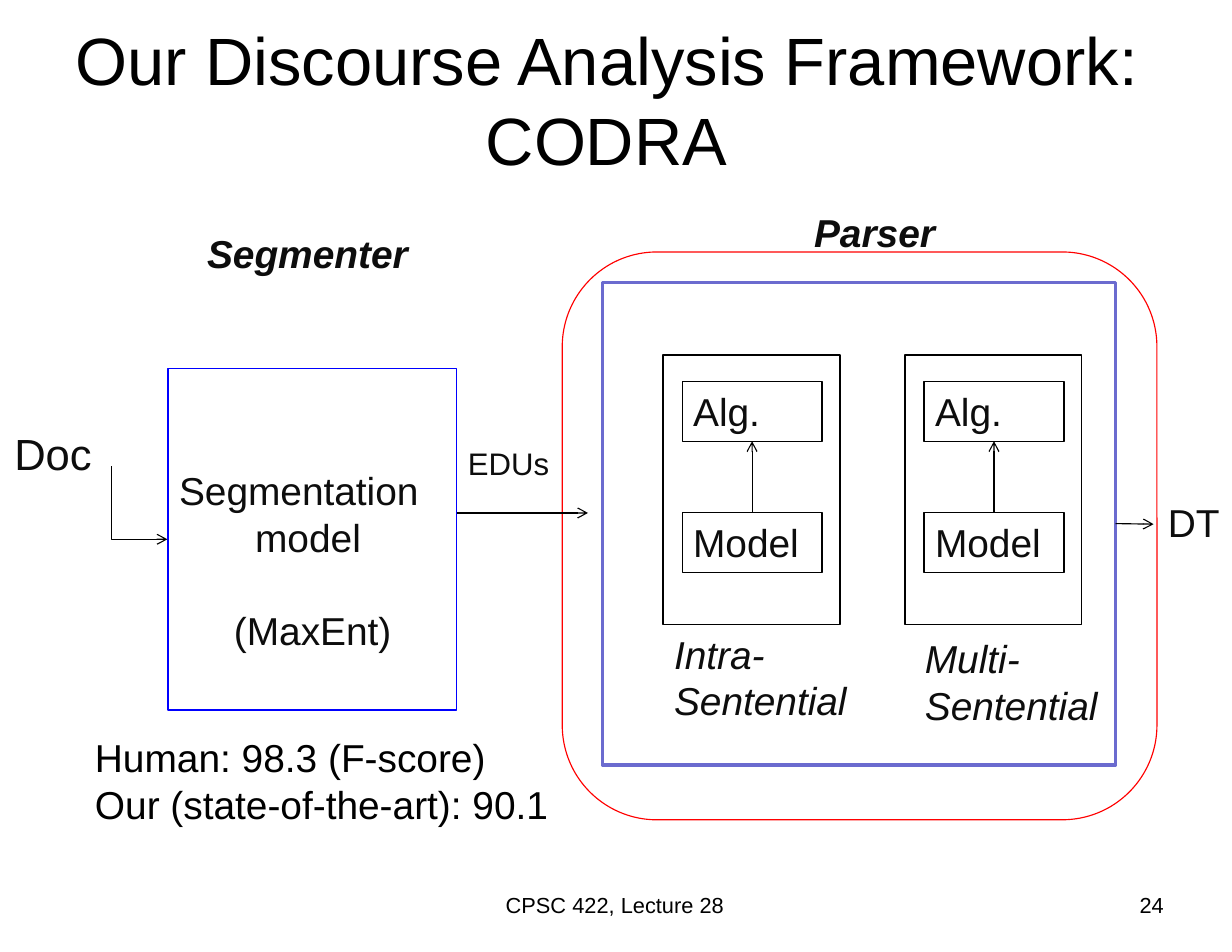
from lxml.etree import SubElement
from pptx import Presentation
from pptx.dml.color import RGBColor
from pptx.enum.shapes import MSO_CONNECTOR, MSO_SHAPE
from pptx.enum.text import MSO_ANCHOR, PP_ALIGN
from pptx.oxml.ns import qn
from pptx.util import Inches, Pt

THEME = {
    "font": "Arial",
    "black": "000000", "ink": "0D0D0D", "white": "FFFFFF",
    "red": "FF0000", "blue": "0000FF", "violet": "6B6BCF",
    "title": 43, "input": 28, "body": 25, "edge": 20, "footer": 14,
    "thin": 0.75, "thick": 2.25,
}
BODY = {"size": "body", "color": "ink"}
HEADING = {**BODY, "bold": True, "italic": True, "wrap": False}
CAPTION = {**BODY, "italic": True, "wrap": False}
FOOTER = {"size": "footer", "color": "black"}

LABELS = [
    (["Our Discourse Analysis Framework: CODRA"], (0, 0.17, 10.83, 1.42),
     {"size": "title", "color": "black", "align": PP_ALIGN.CENTER, "anchor": MSO_ANCHOR.MIDDLE}),
    (["Doc"], (0.03, 3.76, 1.17, 0.58), {"size": "input", "color": "ink"}),
    (["Segmenter"], (1.75, 2, 2.01, 0.52), HEADING),
    (["Parser"], (7.17, 1.81, 2.25, 0.52), {**HEADING, "wrap": True}),
    (["EDUs"], (4.08, 3.92, 0.93, 0.44), {"size": "edge", "color": "ink", "wrap": False}),
    (["DT"], (10.33, 4.4, 0.67, 0.53), {**BODY, "wrap": False}),
    (["Human: 98.3 (F-score)", "Our (state-of-the-art): 90.1"], (0.75, 6.5, 4.67, 0.93),
     {"size": "body", "color": "black"}),
    (["CPSC 422, Lecture 28"], (3.75, 7.91, 3.48, 0.59), {**FOOTER, "align": PP_ALIGN.CENTER}),
    (["24"], (7.92, 7.91, 2.57, 0.59), {**FOOTER, "align": PP_ALIGN.RIGHT}),
]
SEGMENTER = (["Segmentation", "model", "(MaxEnt)"], (1.5, 3.29, 2.58, 3.05))
SEGMENTER_INDENTS = (0, 0.68, 0.49)
PARSER_FRAME = (5.02, 2.25, 5.31, 5.07)
PARSER_BOX = (5.38, 2.52, 4.58, 4.31)
STAGES = [
    (5.92, ["Intra-", "Sentential"], (5.92, 5.58)),
    (8.08, ["Multi-", "Sentential"], (8.16, 5.62)),
]
STAGE_TOP, STAGE_SIZE = 3.17, (1.58, 2.41)
STEPS = [("Alg.", 3.41), ("Model", 4.58)]
STEP_INSET, STEP_SIZE = 0.17, (1.25, 0.53)
CAPTION_SIZE = (1.76, 0.94)


def color(name):
    """Return a theme colour."""
    return RGBColor.from_string(THEME[name])


def write(shape, lines, style):
    """Set the text of a shape, one paragraph a line."""
    frame = shape.text_frame
    frame.word_wrap = style.get("wrap", True)
    frame.vertical_anchor = style.get("anchor", MSO_ANCHOR.TOP)
    font_values = {"name": THEME["font"], "size": Pt(THEME[style["size"]]),
                   "bold": style.get("bold", False), "italic": style.get("italic", False)}
    for index, line in enumerate(lines):
        paragraph = frame.add_paragraph() if index else frame.paragraphs[0]
        paragraph.alignment = style.get("align", PP_ALIGN.LEFT)
        run = paragraph.add_run()
        run.text = line
        for name, value in font_values.items():
            setattr(run.font, name, value)
        run.font.color.rgb = color(style["color"])


def add_label(slide, lines, place, style):
    """Add a text box."""
    write(slide.shapes.add_textbox(*map(Inches, place)), lines, style)


def add_box(slide, place, line, fill=None, width="thin", kind=MSO_SHAPE.RECTANGLE):
    """Add an outlined box."""
    shape = slide.shapes.add_shape(kind, *map(Inches, place))
    shape.shadow.inherit = False
    if fill:
        shape.fill.solid()
        shape.fill.fore_color.rgb = color(fill)
    else:
        shape.fill.background()
    shape.line.color.rgb = color(line)
    shape.line.width = Pt(THEME[width])
    return shape


def add_arrow(slide, start, end, kind=MSO_CONNECTOR.STRAIGHT):
    """Add a connector with an open arrowhead at its end."""
    arrow = slide.shapes.add_connector(kind, *map(Inches, (*start, *end)))
    arrow.line.color.rgb = color("black")
    arrow.line.width = Pt(THEME["thin"])
    properties = arrow._element.spPr
    SubElement(properties.find(qn("a:ln")), qn("a:tailEnd"), type="arrow")
    SubElement(properties, qn("a:effectLst"))
    return arrow


def add_segmenter(slide):
    """Add the segmentation model and the arrows around it."""
    lines, place = SEGMENTER
    box = add_box(slide, place, "blue", "white")
    write(box, lines, BODY)
    box.text_frame.margin_top = Inches(0.88)
    paragraphs = box.text_frame.paragraphs
    for paragraph, indent in zip(paragraphs, SEGMENTER_INDENTS):
        paragraph._p.get_or_add_pPr().set("marL", str(Inches(indent)))
    paragraphs[-1].space_before = Pt(30)
    bend = add_arrow(slide, (1, 4.16), (1.5, 4.81), MSO_CONNECTOR.ELBOW)
    bend.end_connect(box, 1)
    frame = {"left": 0.92, "top": 4.24, "width": 0.65, "height": 0.5}
    for name, value in frame.items():
        setattr(bend, name, Inches(value))
    properties = bend._element.spPr
    properties.find(qn("a:prstGeom")).set("prst", "bentConnector2")
    for name, value in {"rot": "16200000", "flipH": "1"}.items():
        properties.find(qn("a:xfrm")).set(name, value)
    add_arrow(slide, (4.08, 4.58), (5.25, 4.58))


def add_stage(slide, left, caption, caption_place):
    """Add one parsing stage with its model, algorithm and caption."""
    add_box(slide, (left, STAGE_TOP, *STAGE_SIZE), "black", "white")
    steps = []
    for text, top in STEPS:
        step = add_box(slide, (left + STEP_INSET, top, *STEP_SIZE), "black")
        write(step, [text], BODY)
        step.text_frame.vertical_anchor = MSO_ANCHOR.TOP
        steps.append(step)
    algorithm, model = steps
    middle = left + STEP_INSET + STEP_SIZE[0] / 2
    arrow = add_arrow(slide, (middle, STEPS[1][1]), (middle, STEPS[0][1] + STEP_SIZE[1]))
    arrow.begin_connect(model, 0)
    arrow.end_connect(algorithm, 2)
    add_label(slide, caption, (*caption_place, *CAPTION_SIZE), CAPTION)


def main():
    """Build the slide and save it."""
    presentation = Presentation()
    presentation.slide_width, presentation.slide_height = Inches(11), Inches(8.5)
    slide = presentation.slides.add_slide(presentation.slide_layouts[6])
    add_box(slide, PARSER_FRAME, "red", "white", kind=MSO_SHAPE.ROUNDED_RECTANGLE)
    add_segmenter(slide)
    parser = add_box(slide, PARSER_BOX, "violet", width="thick")
    for stage in STAGES:
        add_stage(slide, *stage)
    add_arrow(slide, (9.96, 4.68), (10.3, 4.68)).begin_connect(parser, 3)
    for label in LABELS:
        add_label(slide, *label)
    presentation.save("out.pptx")


if __name__ == "__main__":
    main()
